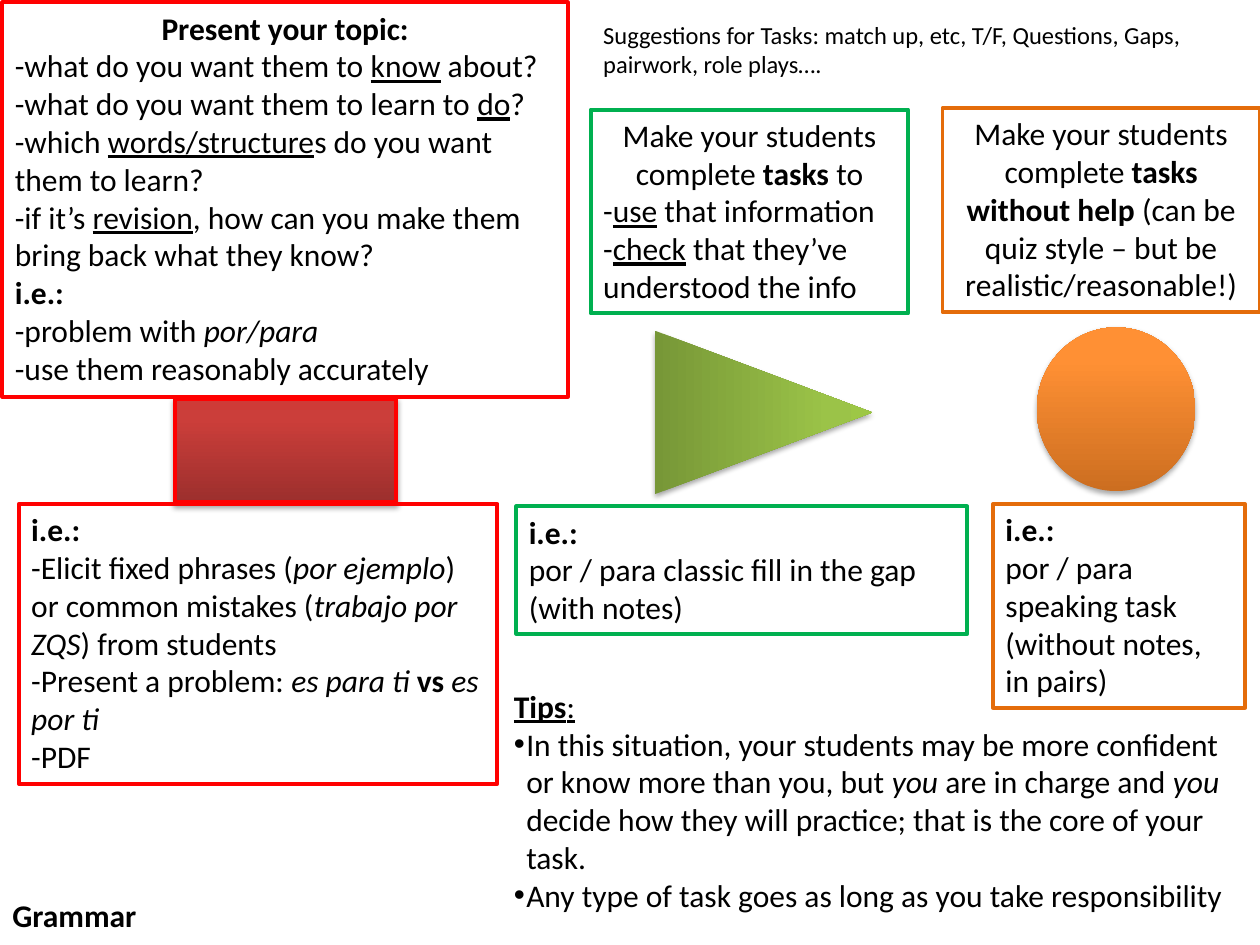
"""Build a one-slide lesson plan for a grammar class."""
from copy import deepcopy
from dataclasses import dataclass
from typing import Optional

from lxml import etree
from pptx import Presentation
from pptx import util as u
from pptx.dml.color import RGBColor
from pptx.enum import shapes, text
from pptx.oxml import parse_xml
from pptx.oxml.ns import nsdecls, qn

RED, GREEN, ORANGE = "FF0000", "00B050", "E46C0A"
MARKS = {"*": "bold", "_": "underline", "~": "italic"}


@dataclass
class Icon:
    kind: shapes.MSO_SHAPE
    place: tuple[float, float, float, float]
    shades: tuple[str, str, str]
    line: Optional[str] = None
    turn: int = 0


@dataclass
class Box:
    place: tuple[float, float, float, float]
    lines: list[str]
    line: Optional[str] = None
    size: int = 18
    title: bool = False


ICONS = [
    Icon(shapes.MSO_SHAPE.OVAL, (20.9, 6.6, 3.2, 3.3), ("CC6E20", "FF9034", "FF9136")),
    Icon(shapes.MSO_SHAPE.RECTANGLE, (3.53, 8.05, 4.45, 2.08), ("9C2F2D", "CB3E3A", "CE3B37"), RED),
    Icon(shapes.MSO_SHAPE.ISOSCELES_TRIANGLE, (13.74, 6.12, 3.3, 4.39),
         ("779737", "9BC348", "9DC746"), turn=90),
]

BOXES = [
    Box((0.05, 0.05, 11.4, 7.95), [
        "*Present your topic:*",
        "-what do you want them to _know_ about?",
        "-what do you want them to learn to _do_?",
        "-which _words/structure_s do you want them to learn?",
        "-if it’s _revision_, how can you make them bring back what they know?",
        "*i.e.:*",
        "-problem with ~por/para~",
        "-use them reasonably accurately"], RED, title=True),
    Box((11.91, 2.21, 6.4, 4.11), [
        "Make your students complete *tasks* to",
        "-_use_ that information",
        "-_check_ that they’ve understood the info"], GREEN, title=True),
    Box((19, 2.18, 6.4, 4.11), [
        "Make your students complete *tasks without help* "
        "(can be quiz style – but be realistic/reasonable!)"], ORANGE, title=True),
    Box((0.38, 10.16, 9.65, 5.64), [
        "*i.e.:*",
        "-Elicit fixed phrases (~por ejemplo~) or common mistakes "
        "(~trabajo por ZQS~) from students",
        "-Present a problem: ~es para ti ~*vs *~es por ti~",
        "-PDF"], RED),
    Box((10.41, 10.21, 9.09, 2.57), [
        "*i.e.:*", "por / para classic fill in the gap (with notes)"], GREEN),
    Box((20.02, 10.16, 5.08, 4.11), [
        "*i.e.:*", "por / para speaking task (without notes, in pairs)"], ORANGE),
    Box((11.91, 0.28, 13.44, 1.45), [
        "Suggestions for Tasks: match up, etc, T/F, Questions, Gaps, pairwork, role plays…."], size=14),
    Box((10.11, 13.72, 15.29, 4.88), [
        "_*Tips*:_",
        "•In this situation, your students may be more confident or know more than you, "
        "but ~you ~are in charge and ~you~ decide how they will practice; "
        "that is the core of your task.",
        "•Any type of task goes as long as you take responsibility"]),
    Box((0, 17.93, 3.3, 1.02), ["*Grammar*"]),
]


def paint(code: str) -> RGBColor:
    return RGBColor.from_string(code)


def edge(shape, code: Optional[str]) -> None:
    if code:
        shape.line.color.rgb = paint(code)
        shape.line.width = u.Pt(2.25)
    else:
        shape.line.fill.background()


def shade(shape, codes: tuple[str, str, str]) -> None:
    fill = shape.fill
    fill.gradient()
    fill.gradient_angle = 90
    stops = shape._element.spPr.find(qn("a:gradFill")).find(qn("a:gsLst"))
    stops.append(deepcopy(stops[-1]))
    for stop, code, spot in zip(fill.gradient_stops, codes, (0, 0.8, 1)):
        stop.color.rgb = paint(code)
        stop.position = spot


def cast(shape) -> None:
    shape.shadow.inherit = False
    shape._element.spPr.find(qn("a:effectLst")).append(parse_xml(
        f'<a:outerShdw {nsdecls("a")} blurRad="40000" dist="23000" dir="5400000" '
        'rotWithShape="0"><a:srgbClr val="000000"><a:alpha val="35000"/>'
        '</a:srgbClr></a:outerShdw>'))


def draw_icon(slide, icon: Icon) -> None:
    shape = slide.shapes.add_shape(icon.kind, *map(u.Cm, icon.place))
    shape.rotation = icon.turn
    shade(shape, icon.shades)
    edge(shape, icon.line)
    cast(shape)


def add_dot(para) -> None:
    props = para._p.get_or_add_pPr()
    props.set("marL", str(u.Cm(0.25)))
    props.set("indent", str(-u.Cm(0.25)))
    etree.SubElement(props, qn("a:buFont")).set("typeface", "Arial")
    etree.SubElement(props, qn("a:buChar")).set("char", "•")


def write(para, line: str, size: int) -> None:
    parts, style = [("", set())], set()
    for char in line:
        if char in MARKS:
            style = style ^ {MARKS[char]}
            parts.append(("", style))
        else:
            parts[-1] = (parts[-1][0] + char, style)
    for words, style in parts:
        if words:
            run = para.add_run()
            run.text = words
            run.font.name = "Calibri"
            run.font.size = u.Pt(size)
            run.font.color.rgb = paint("000000")
            for trait in style:
                setattr(run.font, trait, True)


def draw_box(slide, box: Box) -> None:
    shape = slide.shapes.add_textbox(*map(u.Cm, box.place))
    edge(shape, box.line)
    frame = shape.text_frame
    frame.word_wrap = True
    frame.auto_size = text.MSO_AUTO_SIZE.SHAPE_TO_FIT_TEXT
    for rank, line in enumerate(box.lines):
        para = frame.add_paragraph() if rank else frame.paragraphs[0]
        if box.title and not rank:
            para.alignment = text.PP_ALIGN.CENTER
        if line.startswith("•"):
            add_dot(para)
        write(para, line.lstrip("•"), box.size)


def main() -> None:
    deck = Presentation()
    deck.slide_width, deck.slide_height = u.Cm(25.4), u.Cm(19.05)
    slide = deck.slides.add_slide(deck.slide_layouts[6])
    for icon in ICONS:
        draw_icon(slide, icon)
    for box in BOXES:
        draw_box(slide, box)
    deck.save("out.pptx")


if __name__ == "__main__":
    main()
